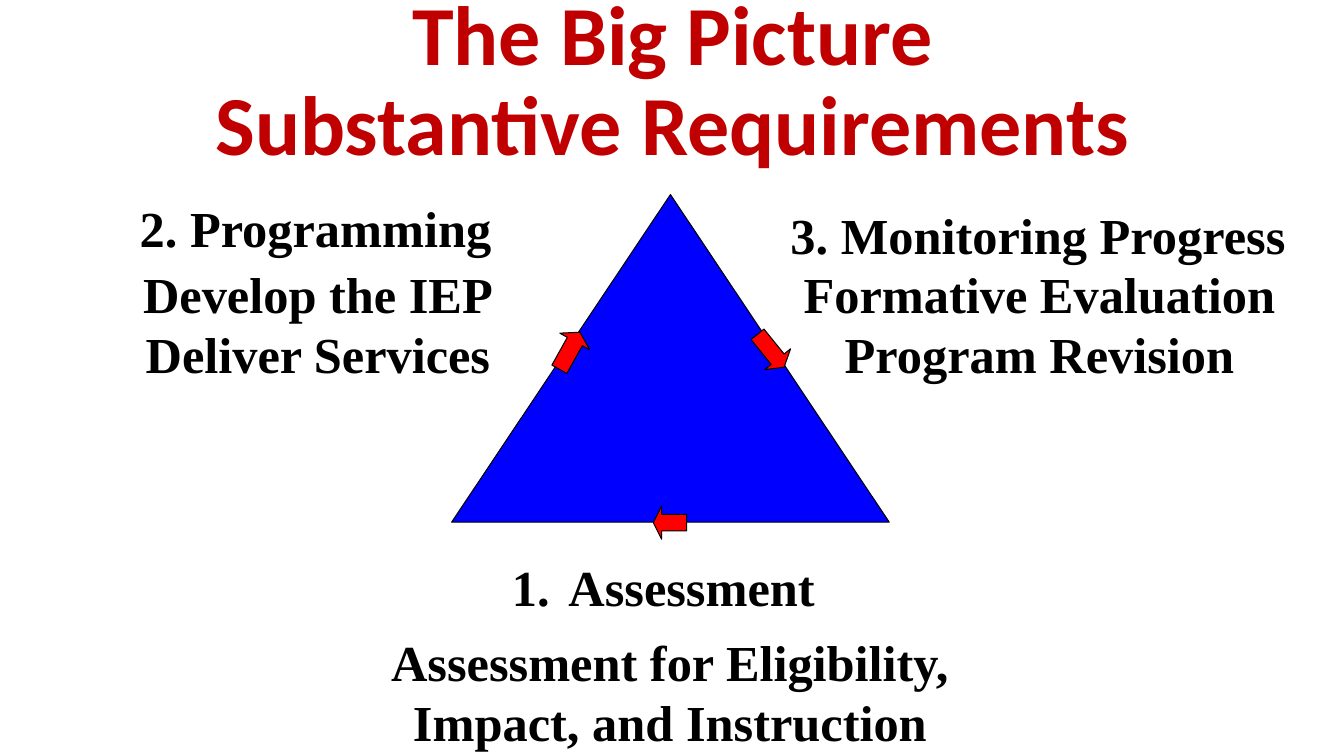
from lxml import etree
from pptx import Presentation
from pptx.dml.color import RGBColor
from pptx.enum.shapes import MSO_SHAPE
from pptx.enum.text import MSO_ANCHOR, MSO_AUTO_SIZE, PP_ALIGN
from pptx.oxml.ns import qn
from pptx.util import Inches, Pt

TRIANGLE = MSO_SHAPE.ISOSCELES_TRIANGLE
LEFT_ARROW, UP_ARROW = MSO_SHAPE.LEFT_ARROW, MSO_SHAPE.UP_ARROW
CENTER, MIDDLE, TOP = PP_ALIGN.CENTER, MSO_ANCHOR.MIDDLE, MSO_ANCHOR.TOP
NO_AUTOFIT = MSO_AUTO_SIZE.NONE

COLORS = {"title": "C00000", "text": "000000", "triangle": "0000FF",
          "arrow": "FF0000", "outline": "000000"}
TITLE_FONT, LABEL_FONT = "Calibri", "Times New Roman"

TITLE_LINES = ["The Big Picture", "Substantive Requirements"]
TITLE_AREA = (1.13, 0.2, 11.08, 1.25)

# preset, area, rotation, adjustments, colour
CYCLE_SHAPES = [
    (TRIANGLE, (4.48, 1.93, 4.34, 3.25), 0, [0.5], "triangle"),
    (LEFT_ARROW, (6.48, 5.02, 0.33, 0.33), 0, [0.5, 0.25], "arrow"),
    (UP_ARROW, (5.48, 3.27, 0.34, 0.42), 29.1, [0.5, 0.31], "arrow"),
    (UP_ARROW, (7.48, 3.27, 0.33, 0.42), 141.1, [0.5, 0.31], "arrow"),
]

# lines, area, wraps, automatic number
LABELS = [
    (["Assessment"], (3.75, 5.47, 5.66, 0.71), True, True),
    (["Assessment for Eligibility,", "Impact, and Instruction"],
     (3.75, 6.21, 5.79, 1.31), False, False),
    (["2. Programming"], (0.95, 1.91, 4.36, 0.71), True, False),
    (["Develop the IEP", "Deliver Services"], (1, 2.56, 4.31, 1.92), True, False),
    (["3. Monitoring Progress"], (7.59, 1.98, 5.41, 0.71), True, False),
    (["Formative Evaluation", "Program Revision"],
     (7.62, 2.56, 5.38, 1.92), True, False),
]


def color(name):
    return RGBColor.from_string(COLORS[name])


def add_span(para, text, font_name, size, color_name):
    span = para.add_run()
    span.text = text
    span.font.name = font_name
    span.font.size = Pt(size)
    span.font.bold = True
    span.font.color.rgb = color(color_name)


def number_paragraph(para):
    """Give the paragraph an automatic number with a hanging indent."""
    properties = para._p.get_or_add_pPr()
    properties.set("marL", str(Inches(0.56)))
    properties.set("indent", str(Inches(-0.56)))
    bullet_font = etree.SubElement(properties, qn("a:buFont"))
    bullet_font.set("typeface", "+mj-lt")
    number = etree.SubElement(properties, qn("a:buAutoNum"))
    number.set("type", "arabicPeriod")


def fill_title(title):
    title.left, title.top, title.width, title.height = map(Inches, TITLE_AREA)
    frame = title.text_frame
    frame.auto_size = NO_AUTOFIT
    frame.vertical_anchor = MIDDLE
    para = frame.paragraphs[0]
    para.alignment = CENTER
    para.line_spacing = 0.9
    for index, line in enumerate(TITLE_LINES):
        if index:
            para.add_line_break()
        add_span(para, line, TITLE_FONT, 60, "title")


def add_cycle_shape(slide, preset, area, rotation, adjustments, color_name):
    shape = slide.shapes.add_shape(preset, *map(Inches, area))
    shape.rotation = rotation
    for index, value in enumerate(adjustments):
        shape.adjustments[index] = value
    shape.shadow.inherit = False
    shape.fill.solid()
    shape.fill.fore_color.rgb = color(color_name)
    shape.line.color.rgb = color("outline")
    shape.line.width = Pt(0.75)


def add_label(slide, lines, area, wraps, numbered):
    box = slide.shapes.add_textbox(*map(Inches, area))
    frame = box.text_frame
    frame.word_wrap = wraps
    frame.vertical_anchor = TOP
    for index, line in enumerate(lines):
        para = frame.add_paragraph() if index else frame.paragraphs[0]
        para.alignment = CENTER
        if numbered:
            number_paragraph(para)
        add_span(para, line, LABEL_FONT, 36, "text")


def main():
    deck = Presentation()
    deck.slide_width, deck.slide_height = Inches(13.33), Inches(7.5)
    slide = deck.slides.add_slide(deck.slide_layouts[5])
    fill_title(slide.shapes.title)
    for cycle_shape in CYCLE_SHAPES:
        add_cycle_shape(slide, *cycle_shape)
    for label in LABELS:
        add_label(slide, *label)
    deck.save("out.pptx")


if __name__ == "__main__":
    main()
